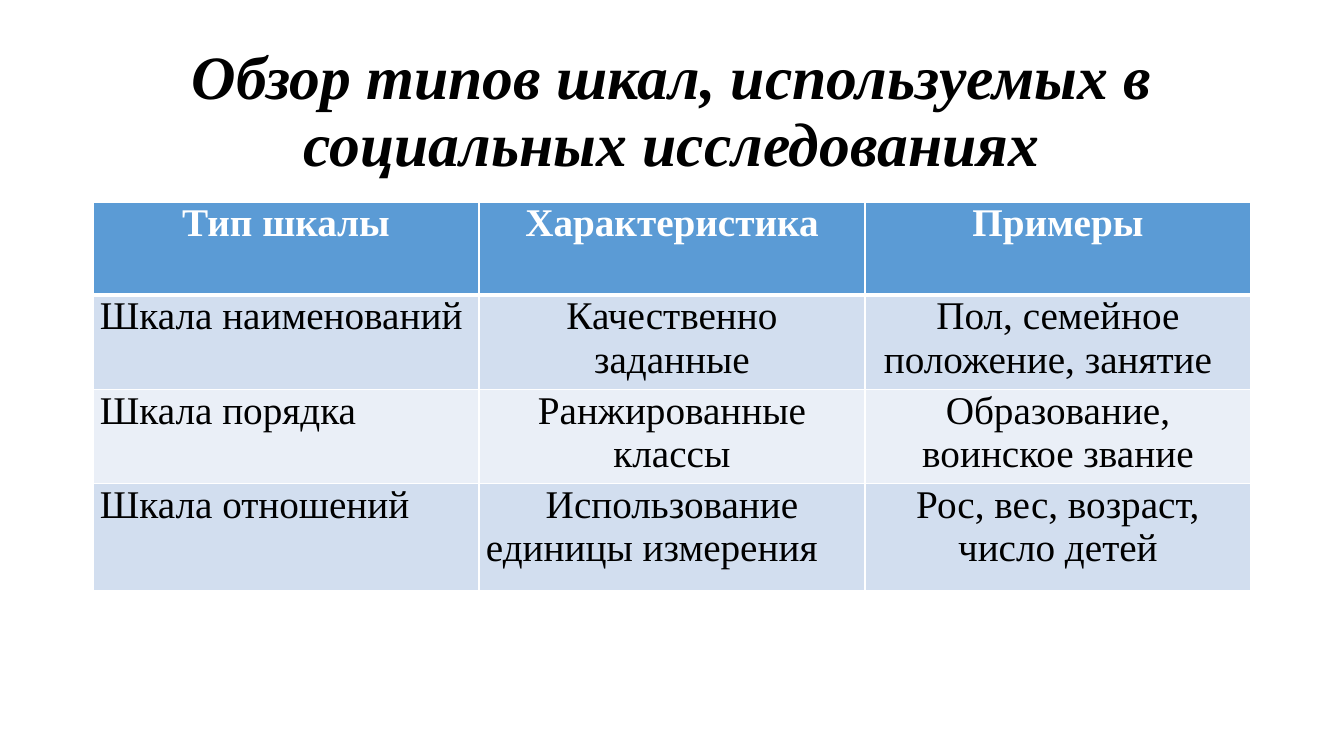
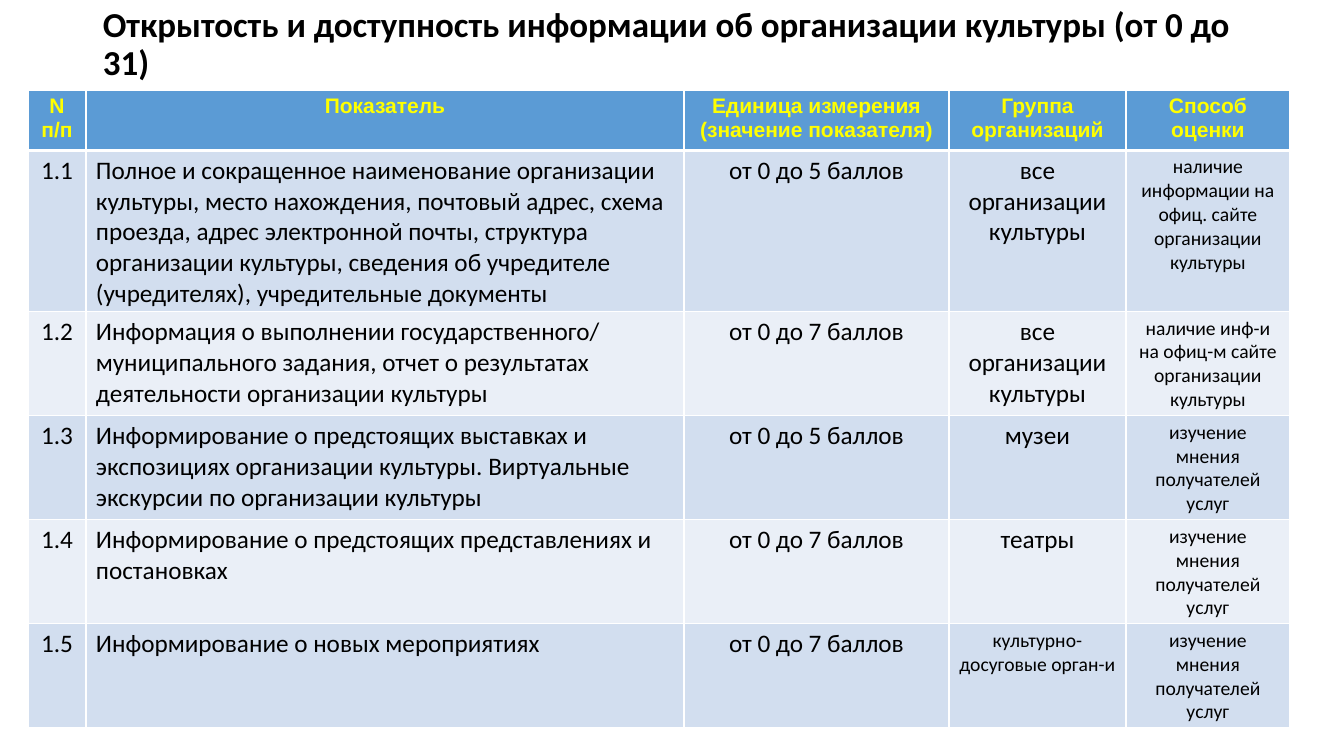
from lxml import etree
from pptx import Presentation
from pptx.dml.color import RGBColor
from pptx.enum.text import MSO_ANCHOR, PP_ALIGN
from pptx.oxml.ns import qn
from pptx.util import Emu, Pt

LEFT, CENTER = PP_ALIGN.LEFT, PP_ALIGN.CENTER
MIDDLE = MSO_ANCHOR.MIDDLE

# Shared palette
BLACK, WHITE, YELLOW = "000000", "FFFFFF", "FFFF00"
HEAD = "5B9BD5"
BANDS = ("D2DEEF", "EAEFF7")


def px(n):
    return Emu(round(n * 914400 / 100.8))


def rgb(code):
    return RGBColor.from_string(code)


class Deck:
    def __init__(self):
        self.prs = Presentation()
        self.prs.slide_width, self.prs.slide_height = px(1344), px(756)
        self.slide = None

    def page(self):
        self.slide = self.prs.slides.add_slide(self.prs.slide_layouts[6])

    def font(self, frame, size, face, color=BLACK, bold=False, italic=False):
        for para in frame.paragraphs:
            for run in para.runs:
                font = run.font
                font.size, font.name = Pt(size), face
                font.bold, font.italic = bold, italic
                font.color.rgb = rgb(color)

    def title(self, text, top, height, size, face, align=LEFT, italic=False):
        box = self.slide.shapes.add_textbox(px(93), px(top), px(1158), px(height))
        frame = box.text_frame
        frame.word_wrap, frame.vertical_anchor = True, MIDDLE
        frame.text = text
        para = frame.paragraphs[0]
        para.alignment, para.line_spacing = align, 0.9
        self.font(frame, size, face, bold=True, italic=italic)

    def border(self, cell, row):
        props = cell._tc.get_or_add_tcPr()
        # The rule between header and body is thicker
        wide = {"lnT": 3 if row == 1 else 1, "lnB": 3 if row == 0 else 1}
        for side in ("lnL", "lnR", "lnT", "lnB"):
            line = etree.SubElement(props, qn("a:" + side))
            line.set("w", str(Pt(wide.get(side, 1))))
            fill = etree.SubElement(line, qn("a:solidFill"))
            etree.SubElement(fill, qn("a:srgbClr")).set("val", WHITE)

    def table(self, left, top, cols, rows, data, head, body, text_col, pad=(10, 5)):
        """head and body are (size, face, color, bold); text_col is left-aligned."""
        shape = self.slide.shapes.add_table(
            len(rows), len(cols), px(left), px(top), px(sum(cols)), px(sum(rows)))
        grid = shape.table
        grid.horz_banding = False
        for col, width in zip(grid.columns, cols):
            col.width = px(width)
        for row, height in zip(grid.rows, rows):
            row.height = px(height)
        for r, line in enumerate(data):
            for c, text in enumerate(line):
                cell = grid.cell(r, c)
                cell.margin_left = cell.margin_right = px(pad[0])
                cell.margin_top = cell.margin_bottom = px(pad[1])
                self.border(cell, r)
                cell.fill.solid()
                cell.fill.fore_color.rgb = rgb(BANDS[(r - 1) % 2] if r else HEAD)
                cell.text_frame.text = text
                for para in cell.text_frame.paragraphs:
                    para.alignment = LEFT if r and c == text_col else CENTER
                self.font(cell.text_frame, *(body if r else head))
        return grid

    def indent(self, para, left):
        para.alignment = LEFT
        para._p.get_or_add_pPr().set("marL", str(px(left)))


def scales(deck):
    face = "Times New Roman"
    deck.page()
    deck.title("Обзор типов шкал, используемых в социальных исследованиях",
               40, 146, 44, face, CENTER, True)
    data = [
        ("Тип шкалы", "Характеристика", "Примеры"),
        ("Шкала наименований", "Качественно заданные",
         "Пол, семейное\nположение, занятие"),
        ("Шкала порядка", "Ранжированные классы", "Образование, воинское звание"),
        ("Шкала отношений", "Использование\nединицы измерения",
         "Рос, вес, возраст,\nчисло детей"),
    ]
    grid = deck.table(93, 202, [386] * 3, [93] * 3 + [107], data,
                      (28, face, WHITE, True), (28, face), 0, (7, 0))
    # Second lines that sit left of the column centre
    for r, c, left in ((1, 2, 12), (3, 1, 0)):
        deck.indent(grid.cell(r, c).text_frame.paragraphs[1], left)


def access(deck):
    face = "Calibri"
    deck.page()
    deck.title("Открытость и доступность информации об организации культуры "
               "(от 0 до 31)", 0, 91, 25, face)
    every = "все организации культуры"
    study = "изучение мнения получателей услуг"
    five, seven = (f"от 0 до {n} баллов" for n in (5, 7))
    data = [
        ("N п/п", "Показатель", "Единица измерения (значение показателя)",
         "Группа организаций", "Способ оценки"),
        ("1.1", "Полное и сокращенное наименование организации культуры, место "
         "нахождения, почтовый адрес, схема проезда, адрес электронной почты, "
         "структура организации культуры, сведения об учредителе (учредителях), "
         "учредительные документы", five, every,
         "наличие информации на офиц. сайте организации культуры"),
        ("1.2", "Информация о выполнении государственного/ муниципального задания, "
         "отчет о результатах деятельности организации культуры", seven, every,
         "наличие инф-и на офиц-м сайте организации культуры"),
        ("1.3", "Информирование о предстоящих выставках и экспозициях организации "
         "культуры. Виртуальные экскурсии по организации культуры",
         five, "музеи", study),
        ("1.4", "Информирование о предстоящих представлениях и постановках",
         seven, "театры", study),
        ("1.5", "Информирование о новых мероприятиях", seven,
         "культурно-досуговые орган-и", study),
    ]
    grid = deck.table(28, 90, [58, 598, 265, 177, 164], [59, 153, 98, 98, 98, 103],
                      data, (15, "Arial", YELLOW, True), (18, face), 1)
    # Smaller notes: the last column and one long group name
    for r, c in [(r, 4) for r in range(1, 6)] + [(5, 3)]:
        deck.font(grid.cell(r, c).text_frame, 14, face)


def main():
    deck = Deck()
    scales(deck)
    access(deck)
    deck.prs.save("out.pptx")


if __name__ == "__main__":
    main()
